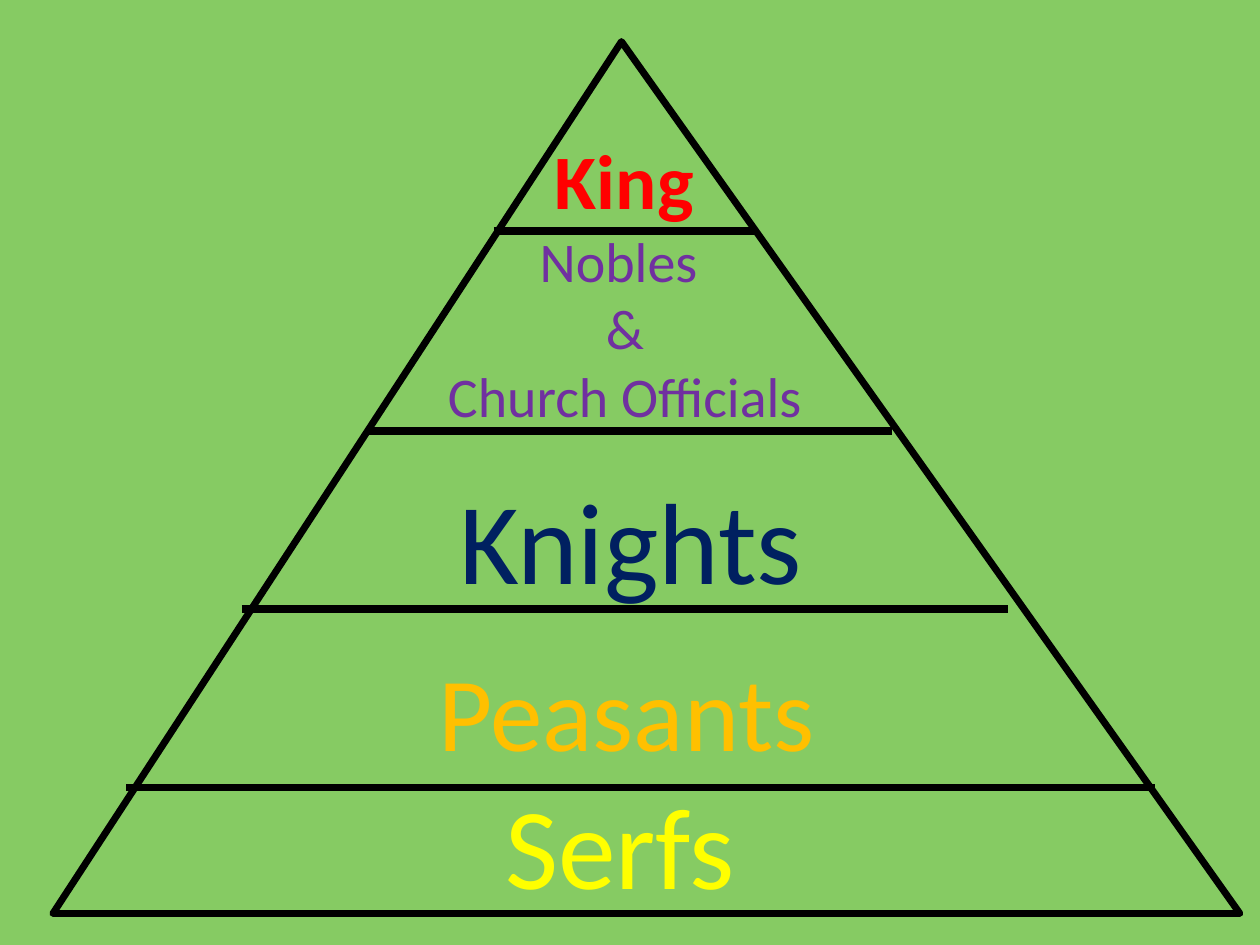
from lxml.etree import SubElement
from pptx import Presentation
from pptx.dml.color import RGBColor
from pptx.enum.shapes import MSO_CONNECTOR as Connector, MSO_SHAPE as Shape
from pptx.enum.text import MSO_AUTO_SIZE as AutoSize, PP_ALIGN as Align
from pptx.oxml.ns import qn
from pptx.util import Inches, Pt

THEME = {
    "font": "Calibri",
    "background": "86CB63",
    "outline": "000000",
    "outline_width": 4,
    "King": {"color": "FF0000", "size": 44, "bold": True},
    "Nobles": {"color": "7030A0", "size": 32},
    "Knights": {"color": "002060", "size": 66},
    "Peasants": {"color": "FFC000", "size": 60, "space_size": 18},
    "Serfs": {"color": "FFFF00", "size": 66, "space_size": 24},
}

PYRAMID = (0.42, 0.33, 9.42, 6.92)
APEX = 0.479

# left, right, height on the slide, line width
DIVIDERS = [
    (1, 9.17, 6.25, 4.25),
    (1.92, 8, 4.83, 4.5),
    (2.92, 7.08, 3.42, 4.75),
    (3.92, 6, 1.83, 4.5),
]

# rank style, lines of text, box
RANKS = [
    ("King", ["King"], (4.08, 1, 1.75, 0.84)),
    ("Nobles", ["Nobles ", "&", "Church Officials"], (2.92, 1.75, 4.08, 1.72)),
    ("Knights", ["Knights"], (2.92, 3.67, 4.17, 1.21)),
    ("Peasants", ["Peasants"], (2.29, 5.08, 5.42, 1.11)),
    ("Serfs", ["Serfs"], (2.65, 6.09, 4.62, 1.21)),
]


def color(name):
    return RGBColor.from_string(THEME[name])


def draw_outline(line, width):
    line.color.rgb = color("outline")
    line.width = Pt(width)


def add_pyramid(slide):
    pyramid = slide.shapes.add_shape(Shape.ISOSCELES_TRIANGLE, *map(Inches, PYRAMID))
    pyramid.adjustments[0] = APEX
    pyramid.shadow.inherit = False
    pyramid.fill.background()
    draw_outline(pyramid.line, THEME["outline_width"])


def add_divider(slide, left, right, height, width):
    ends = map(Inches, (left, height, right, height))
    divider = slide.shapes.add_connector(Connector.STRAIGHT, *ends)
    draw_outline(divider.line, width)
    SubElement(divider._element.spPr, qn("a:effectLst"))


def add_rank(slide, rank, lines, box):
    style = THEME[rank]
    frame = slide.shapes.add_textbox(*map(Inches, box)).text_frame
    frame.word_wrap = True
    frame.auto_size = AutoSize.SHAPE_TO_FIT_TEXT
    for index, text in enumerate(lines):
        paragraph = frame.add_paragraph() if index else frame.paragraphs[0]
        paragraph.alignment = Align.CENTER
        font = paragraph.font
        font.name = THEME["font"]
        font.size = Pt(style["size"])
        font.bold = style.get("bold", False)
        font.color.rgb = RGBColor.from_string(style["color"])
        paragraph.add_run().text = text
        if "space_size" in style:
            space = paragraph.add_run()
            space.text = " "
            space.font.size = Pt(style["space_size"])
            space.font.color.rgb = color("outline")


def main():
    presentation = Presentation()
    presentation.slide_width = Inches(10)
    presentation.slide_height = Inches(7.5)
    slide = presentation.slides.add_slide(presentation.slide_layouts[6])
    slide.background.fill.solid()
    slide.background.fill.fore_color.rgb = color("background")
    add_pyramid(slide)
    for divider in DIVIDERS:
        add_divider(slide, *divider)
    for rank in RANKS:
        add_rank(slide, *rank)
    presentation.save("out.pptx")


if __name__ == "__main__":
    main()
